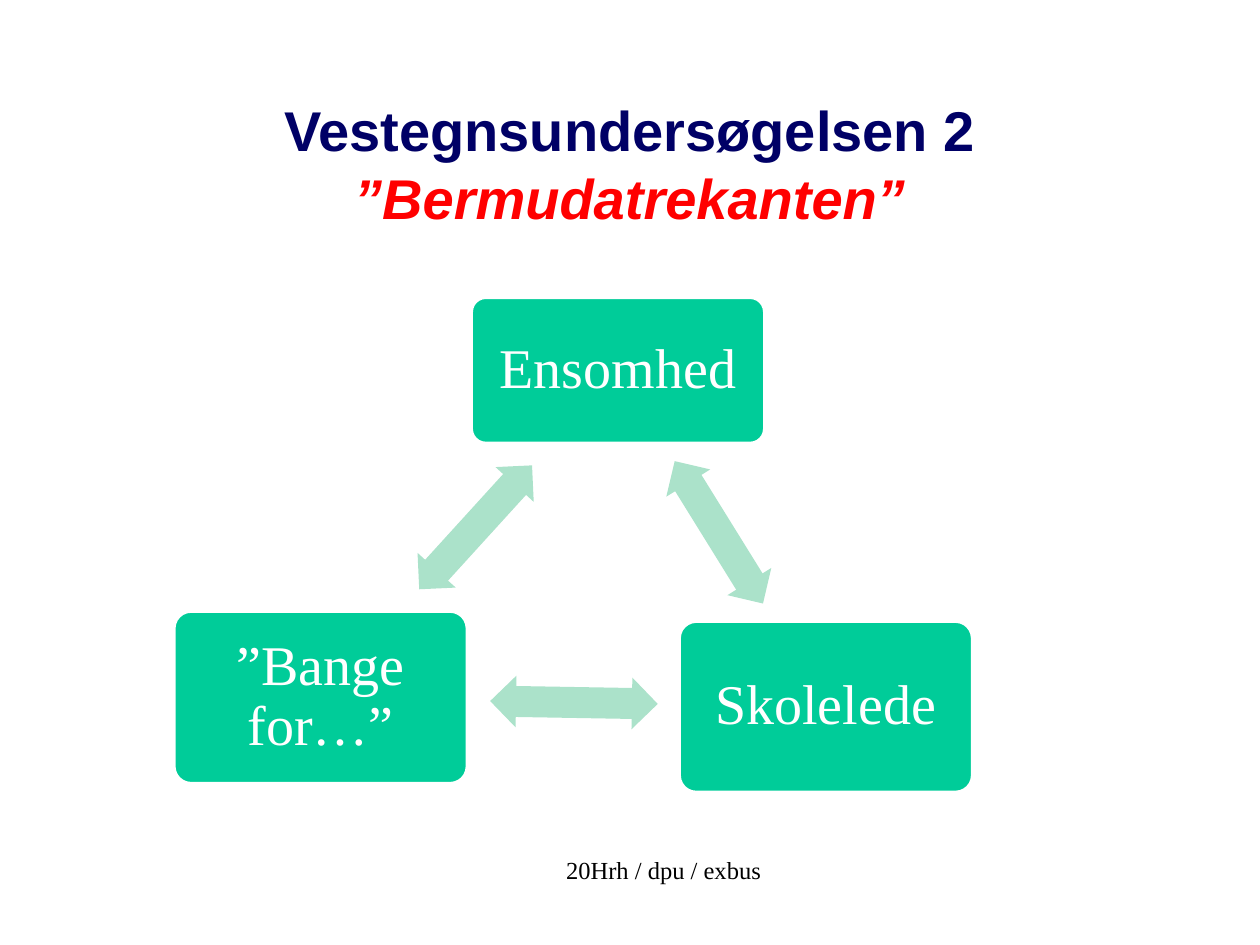
from typing import NamedTuple

from pptx import Presentation
from pptx.dml.color import RGBColor
from pptx.enum.shapes import MSO_SHAPE
from pptx.enum.text import MSO_ANCHOR, PP_ALIGN
from pptx.util import Inches, Pt

COLORS = {
    "navy": "000066",
    "red": "FF0000",
    "green": "00CC99",
    "mint": "ABE2CA",
    "white": "FFFFFF",
    "black": "000000",
}
SERIF = "Times New Roman"
NODE_WIDTH = 2.33
ARROW_WIDTH, ARROW_HEIGHT = 1.33, 0.41


class Node(NamedTuple):
    label: str
    left: float
    top: float
    height: float


class Arrow(NamedTuple):
    left: float
    top: float
    rotation: float


NODES = [
    Node("Ensomhed", 3.74, 2.36, 1.16),
    Node("Skolelede", 5.39, 4.93, 1.36),
    Node("”Bange for…”", 1.38, 4.85, 1.37),
]
ARROWS = [
    Arrow(5.04, 4.02, 58.2),
    Arrow(3.89, 5.37, 181),
    Arrow(3.11, 3.98, 312.3),
]


def color(name: str) -> RGBColor:
    return RGBColor.from_string(COLORS[name])


def add_span(para, text: str, size: float, font: str, ink: str,
             bold: bool = False, italic: bool = False) -> None:
    span = para.add_run()
    span.text = text
    span.font.size = Pt(size)
    span.font.name = font
    span.font.bold = bold
    span.font.italic = italic
    span.font.color.rgb = color(ink)


def add_text_box(page, left: float, top: float, width: float, height: float,
                 anchor: MSO_ANCHOR, align: PP_ALIGN):
    box = page.shapes.add_textbox(Inches(left), Inches(top), Inches(width), Inches(height))
    box.text_frame.word_wrap = True
    box.text_frame.vertical_anchor = anchor
    para = box.text_frame.paragraphs[0]
    para.alignment = align
    return para


def add_node(page, node: Node) -> None:
    box = page.shapes.add_shape(
        MSO_SHAPE.ROUNDED_RECTANGLE, Inches(node.left), Inches(node.top),
        Inches(NODE_WIDTH), Inches(node.height))
    box.shadow.inherit = False
    box.adjustments[0] = 0.1
    box.fill.solid()
    box.fill.fore_color.rgb = color("green")
    box.line.color.rgb = color("white")
    box.line.width = Pt(2)
    frame = box.text_frame
    frame.word_wrap = True
    frame.vertical_anchor = MSO_ANCHOR.MIDDLE
    frame.margin_left = frame.margin_right = Inches(0.13)
    frame.margin_top = frame.margin_bottom = Inches(0.13)
    para = frame.paragraphs[0]
    para.alignment = PP_ALIGN.CENTER
    para.line_spacing = 0.9
    add_span(para, node.label, 32, SERIF, "white")


def add_arrow(page, arrow: Arrow) -> None:
    shape = page.shapes.add_shape(
        MSO_SHAPE.LEFT_RIGHT_ARROW, Inches(arrow.left), Inches(arrow.top),
        Inches(ARROW_WIDTH), Inches(ARROW_HEIGHT))
    shape.shadow.inherit = False
    shape.adjustments[0] = 0.6
    shape.adjustments[1] = 0.5
    shape.rotation = arrow.rotation
    shape.fill.solid()
    shape.fill.fore_color.rgb = color("mint")
    shape.line.fill.background()


def main() -> None:
    deck = Presentation()
    deck.slide_width, deck.slide_height = Inches(10), Inches(7.5)
    page = deck.slides.add_slide(deck.slide_layouts[6])

    title = add_text_box(page, 0.75, 0.67, 8.5, 1.25, MSO_ANCHOR.MIDDLE, PP_ALIGN.CENTER)
    add_span(title, "Vestegnsundersøgelsen 2", 32, "Arial", "navy", bold=True)
    title.add_line_break()
    add_span(title, "”Bermudatrekanten”", 32, "Arial", "red", bold=True, italic=True)

    for node, arrow in zip(NODES, ARROWS):
        add_node(page, node)
        add_arrow(page, arrow)

    footer = add_text_box(page, 4.06, 6.74, 2.08, 0.5, MSO_ANCHOR.TOP, PP_ALIGN.RIGHT)
    add_span(footer, "20Hrh / dpu / exbus", 14, SERIF, "black")

    deck.save("out.pptx")


if __name__ == "__main__":
    main()
